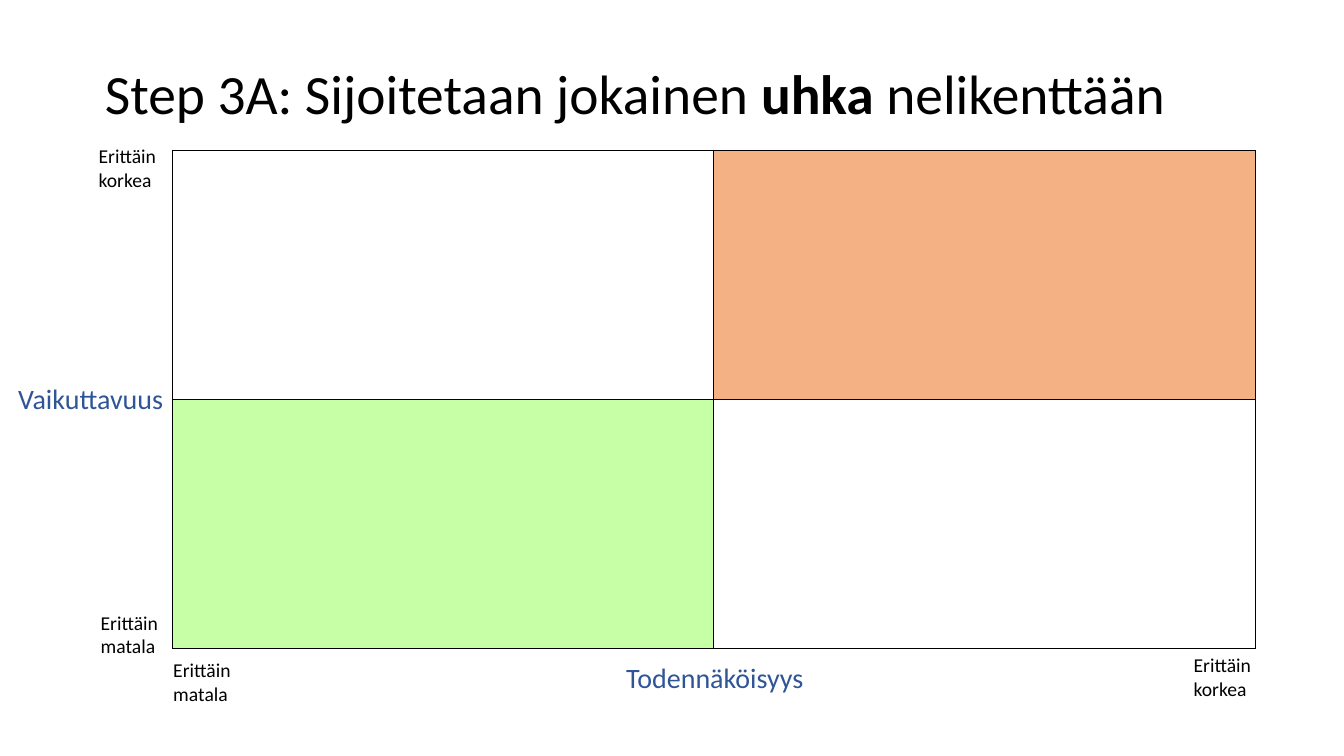
from lxml import etree
from pptx import Presentation
from pptx.dml.color import RGBColor
from pptx.enum.text import MSO_ANCHOR, MSO_AUTO_SIZE, PP_ALIGN
from pptx.oxml.ns import qn
from pptx.util import Inches, Pt

LEFT, CENTER = PP_ALIGN.LEFT, PP_ALIGN.CENTER
MIDDLE = MSO_ANCHOR.MIDDLE
GROW, NO_FIT = MSO_AUTO_SIZE.SHAPE_TO_FIT_TEXT, MSO_AUTO_SIZE.NONE

COLORS = {"black": "000000", "blue": "2F5597", "orange": "F4B183", "green": "C6FFA6"}


def add_run(p, text, size, color, bold=False):
    r = p.add_run()
    r.text = text
    font = {"name": "Calibri", "size": Pt(size), "bold": bold}
    for name, value in font.items():
        setattr(r.font, name, value)
    r.font.color.rgb = RGBColor.from_string(COLORS[color])


def add_border(cell, side):
    ln = etree.SubElement(cell._tc.get_or_add_tcPr(), qn(f"a:{side}"), w=str(Pt(1)))
    fill = etree.SubElement(ln, qn("a:solidFill"))
    etree.SubElement(fill, qn("a:srgbClr"), val=COLORS["black"])


prs = Presentation()
prs.slide_width, prs.slide_height = Inches(13.33), Inches(7.5)
s = prs.slides.add_slide(prs.slide_layouts[5])

# Title
title = s.shapes.title
title.left, title.top = Inches(0.94), Inches(0.59)
title.width, title.height = Inches(11.5), Inches(0.73)
tf = title.text_frame
tf.word_wrap, tf.auto_size, tf.vertical_anchor = True, NO_FIT, MIDDLE
p = tf.paragraphs[0]
p.alignment, p.line_spacing = LEFT, 0.9
for text, bold in [("Step 3A: Sijoitetaan jokainen ", False), ("uhka", True),
                   (" nelikenttään", False)]:
    add_run(p, text, 39.6, "black", bold)

# Risk matrix
table = s.shapes.add_table(2, 2, Inches(1.71), Inches(1.49),
                           Inches(10.74), Inches(4.94)).table
table.first_row = table.horz_banding = False
cell_fills = {(0, 1): "orange", (1, 0): "green"}
for row in range(2):
    for col in range(2):
        cell = table.cell(row, col)
        for side in ("lnL", "lnR", "lnT", "lnB"):
            add_border(cell, side)
        if (row, col) in cell_fills:
            cell.fill.solid()
            cell.fill.fore_color.rgb = RGBColor.from_string(COLORS[cell_fills[row, col]])
        else:
            cell.fill.background()

# Axis titles and scale ends: box, runs with sizes, colour, alignment, wrap
labels = [
    ((0.07, 3.74, 1.66, 0.44), [("Vaikuttavuus", 20)], "blue", CENTER, False),
    ((6.1, 6.5, 1.98, 0.44), [("Todennäköisyys", 20)], "blue", CENTER, False),
    ((0.88, 1.32, 1.2, 0.64), [("Erittäin", 14), (" ", 18), ("korkea", 14)],
     "black", LEFT, True),
    ((0.9, 6.01, 1.2, 0.57), [("Erittäin matala", 14)], "black", LEFT, True),
    ((1.62, 6.48, 0.96, 0.57), [("Erittäin matala", 14)], "black", LEFT, True),
    ((11.74, 6.43, 0.96, 0.57), [("Erittäin korkea", 14)], "black", LEFT, True),
]
for box, runs, color, align, wrap in labels:
    tf = s.shapes.add_textbox(*map(Inches, box)).text_frame
    tf.word_wrap, tf.auto_size = wrap, GROW
    p = tf.paragraphs[0]
    p.alignment = align
    for text, size in runs:
        add_run(p, text, size, color)

prs.save("out.pptx")
